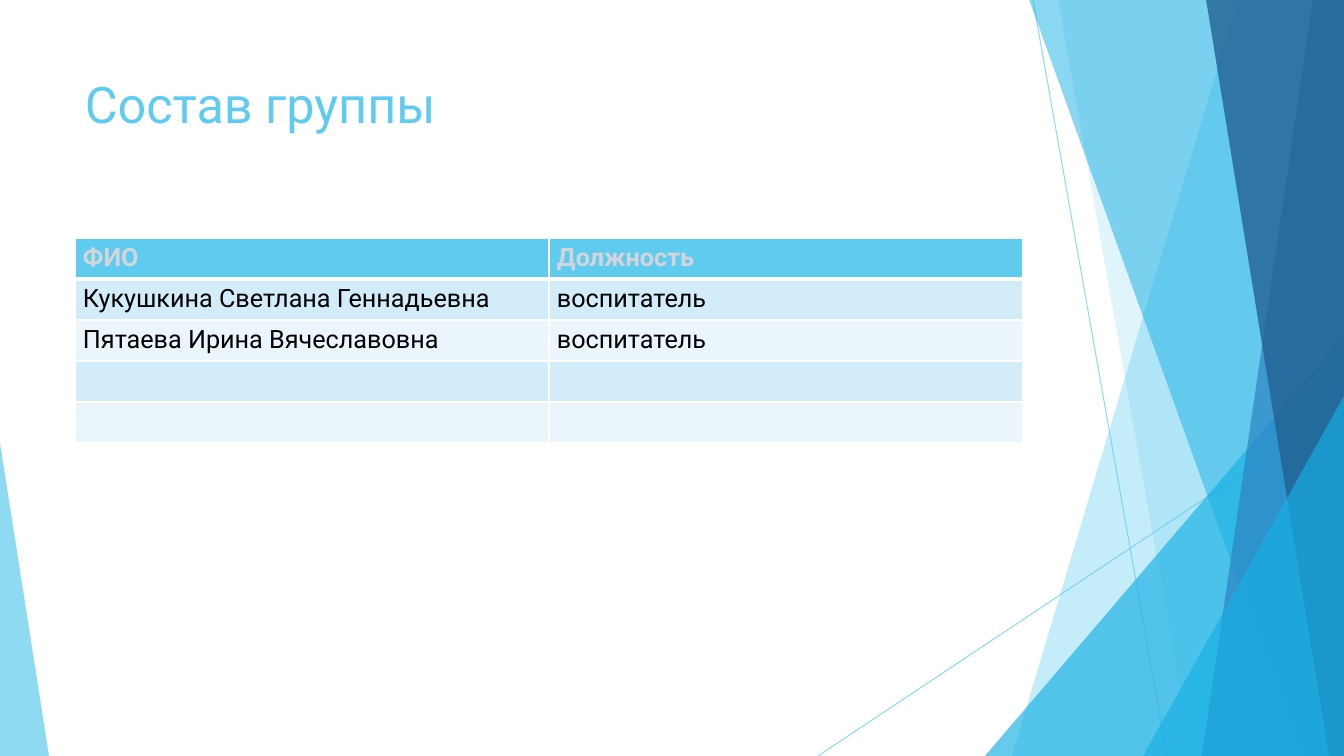
from lxml import etree
from pptx import Presentation
from pptx.dml.color import RGBColor
from pptx.enum.shapes import MSO_CONNECTOR, MSO_SHAPE
from pptx.enum.text import MSO_ANCHOR
from pptx.oxml.ns import qn
from pptx.util import Emu, Pt

WIDTH, HEIGHT = 1344, 756
SCALE = 12192000 / WIDTH
FONT = "Roboto"
SKY, CYAN, BLUE, NAVY = "5FCBEF", "17B0E4", "2E83C3", "226292"
WHITE, GREY, BLACK = "FFFFFF", "D3D5DB", "000000"
BANDS = ["D2ECF9", "EAF6FC"]

TITLE = "Состав группы"
TITLE_BOX = (75, 68, 948, 145)
STAFF = [
    ("ФИО", "Должность"),
    ("Кукушкина Светлана Геннадьевна", "воспитатель"),
    ("Пятаева Ирина Вячеславовна", "воспитатель"),
    ("", ""),
    ("", ""),
]
TABLE_LEFT, TABLE_TOP, COLUMN_WIDTH, ROW_HEIGHT = 75, 238, 474, 41

RAYS = [(1033, 0, 1167, 756), (1344, 406, 818, 756)]
# Bands reach the right edge: top-left x, bottom-left x, colour, opacity
# Triangles: left, top, width, height, apex position, colour, opacity
DECOR = [
    ("band", (1238, 1012), SKY, 36),
    ("band", (1058, 1192), SKY, 20),
    ("triangle", (985, 336, 359, 420, 1), CYAN, 66),
    ("band", (1029, 1301), CYAN, 50),
    ("band", (1313, 1202), BLUE, 70),
    ("band", (1206, 1329), NAVY, 80),
    ("triangle", (1143, 396, 201, 360, 1), CYAN, 66),
    ("triangle", (0, 443, 49, 313, 0), SKY, 70),
]


def px(*lengths):
    return [Emu(round(length * SCALE)) for length in lengths]


def rgb(value):
    return RGBColor.from_string(value)


def set_opacity(element, percent):
    color = element.find(".//" + qn("a:srgbClr"))
    etree.SubElement(color, qn("a:alpha"), val=str(percent * 1000))


def style_text(para, size, color, bold=False):
    for span in para.runs:
        span.font.name = FONT
        span.font.size = Pt(size)
        span.font.bold = bold
        span.font.color.rgb = rgb(color)


def add_ray(page, ends):
    ray = page.shapes.add_connector(MSO_CONNECTOR.STRAIGHT, *px(*ends))
    ray.line.color.rgb = rgb(SKY)
    ray.line.width = Pt(0.75)
    properties = ray._element.spPr
    set_opacity(properties, 70)
    etree.SubElement(properties, qn("a:effectLst"))


def add_decor(page, kind, geometry, color, opacity):
    if kind == "band":
        top_x, bottom_x = geometry
        outline = page.shapes.build_freeform(top_x, -1, scale=SCALE)
        outline.add_line_segments([(WIDTH, -1), (WIDTH, HEIGHT), (bottom_x, HEIGHT)])
        shape = outline.convert_to_shape()
    else:
        *place, apex = geometry
        shape = page.shapes.add_shape(MSO_SHAPE.ISOSCELES_TRIANGLE, *px(*place))
        shape.adjustments[0] = apex
    shape.shadow.inherit = False
    shape.fill.solid()
    shape.fill.fore_color.rgb = rgb(color)
    shape.line.fill.background()
    set_opacity(shape._element.spPr, opacity)


def add_title(page):
    box = page.shapes.add_textbox(*px(*TITLE_BOX))
    frame = box.text_frame
    frame.word_wrap = True
    frame.vertical_anchor = MSO_ANCHOR.TOP
    frame.text = TITLE
    style_text(frame.paragraphs[0], 36, SKY)


def set_borders(cell, widths):
    """Insert the side lines ahead of the fill, as the schema orders them."""
    properties = cell._tc.get_or_add_tcPr()
    for index, (side, width) in enumerate(widths.items()):
        line = etree.Element(qn("a:ln" + side), w=str(Pt(width)))
        fill = etree.SubElement(line, qn("a:solidFill"))
        etree.SubElement(fill, qn("a:srgbClr"), val=WHITE)
        properties.insert(index, line)


def add_staff_table(page):
    rows, columns = len(STAFF), len(STAFF[0])
    place = px(TABLE_LEFT, TABLE_TOP, COLUMN_WIDTH * columns, ROW_HEIGHT * rows)
    table = page.shapes.add_table(rows, columns, *place).table
    for column in table.columns:
        column.width = px(COLUMN_WIDTH)[0]
    for r, record in enumerate(STAFF):
        table.rows[r].height = px(ROW_HEIGHT)[0]
        header = r == 0
        for c, text in enumerate(record):
            cell = table.cell(r, c)
            cell.margin_left, cell.margin_right = px(8, 8)
            cell.margin_top, cell.margin_bottom = px(5, 5)
            cell.fill.solid()
            cell.fill.fore_color.rgb = rgb(SKY if header else BANDS[(r - 1) % 2])
            set_borders(cell, {"L": 1, "R": 1, "T": 3 if r == 1 else 1,
                               "B": 3 if header else 1})
            if text:
                cell.text = text
                style_text(cell.text_frame.paragraphs[0], 18,
                           GREY if header else BLACK, header)


def main():
    deck = Presentation()
    deck.slide_width, deck.slide_height = px(WIDTH, HEIGHT)
    page = deck.slides.add_slide(deck.slide_layouts[6])
    page.background.fill.solid()
    page.background.fill.fore_color.rgb = rgb(WHITE)
    for ends in RAYS:
        add_ray(page, ends)
    for item in DECOR:
        add_decor(page, *item)
    add_title(page)
    add_staff_table(page)
    deck.save("out.pptx")


if __name__ == "__main__":
    main()
